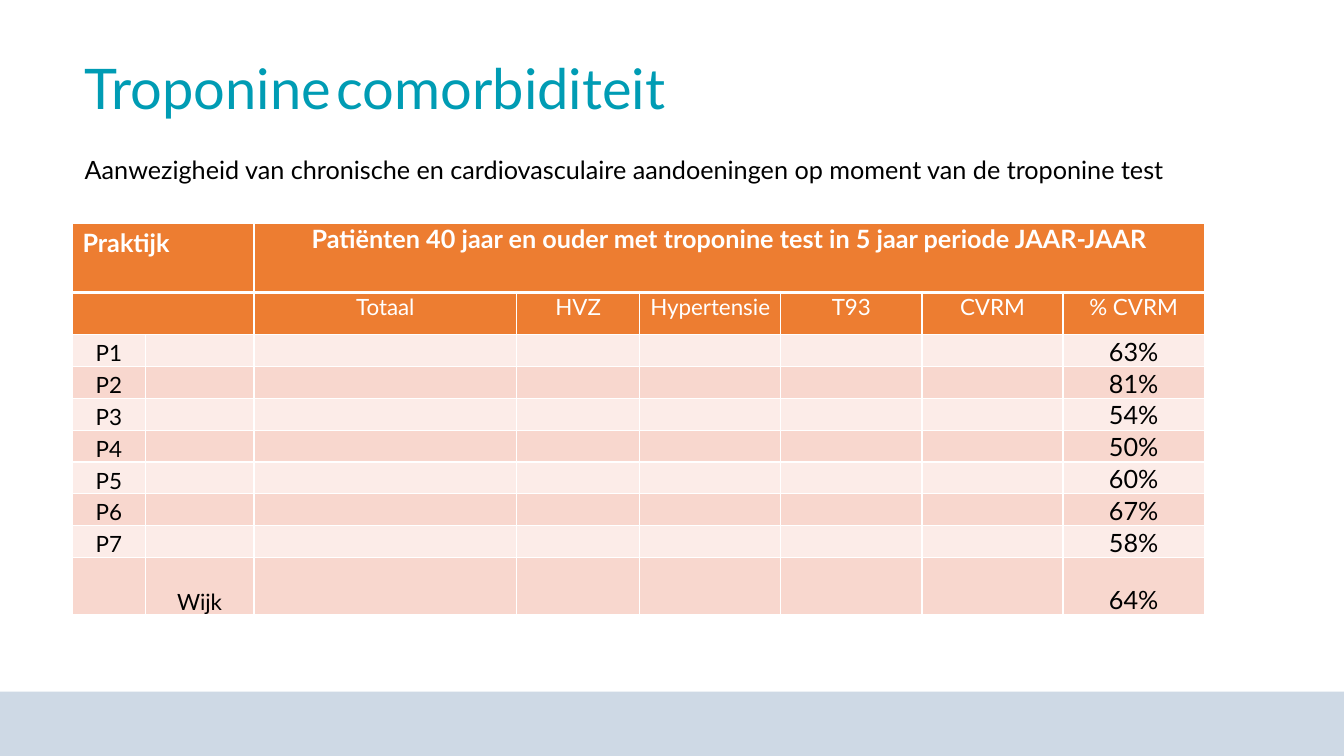
from lxml.etree import SubElement as Sub
from pptx import Presentation
from pptx.dml.color import RGBColor as Rgb
from pptx.enum.shapes import MSO_SHAPE as Geo
from pptx.enum.text import MSO_ANCHOR as Anc, MSO_AUTO_SIZE as Auto, PP_ALIGN as Al
from pptx.oxml.ns import qn
from pptx.util import Inches, Pt

TEAL, ORANGE, BAND = "009CB4", "ED7D31", "CED9E5"
PALE, PINK, WHITE, BLACK = "FCECE8", "F8D7CE", "FFFFFF", "000000"
COLS = [5.4, 8.1, 19.55, 9.15] + [10.5] * 4
ROWS = [9.2, 5.6] + [4.15] * 7 + [7.6]
HEADS = ["Totaal", "HVZ", "Hypertensie", "T93", "CVRM", "% CVRM"]
RATES = [63, 81, 54, 50, 60, 67, 58]
SMALL = {"size": Pt(16), "bold": False}
LARGE = {"size": Pt(18), "bold": False}
HEAD = {"size": Pt(18), "bold": True}
TIGHT = {"margin_left": Inches(0.01), "margin_right": Inches(0.01),
         "margin_top": Inches(0.01), "margin_bottom": 0}


def tint(code):
    """Turn a hex string into a colour."""
    return Rgb.from_string(code)


def put(obj, vals):
    """Set each attribute in a dict of format values."""
    for key, val in vals.items():
        setattr(obj, key, val)


class Deck:
    """Hold the style and the current slide; lengths are percents of its size."""

    font = "Lato"

    def __init__(self):
        """Open a wide deck with one titled slide."""
        self.prs = Presentation()
        put(self.prs, {"slide_width": Inches(13.33), "slide_height": Inches(7.5)})
        self.page = self.prs.slides.add_slide(self.prs.slide_layouts[1])

    def wide(self, part):
        """Give a percent of the slide width."""
        return round(self.prs.slide_width * part / 100)

    def high(self, part):
        """Give a percent of the slide height."""
        return round(self.prs.slide_height * part / 100)

    def area(self, x, y, w, h):
        """Give left, top, width and height."""
        return self.wide(x), self.high(y), self.wide(w), self.high(h)

    def say(self, para, text, code, look, align):
        """Add one styled run to a paragraph."""
        para.alignment = align
        run = para.add_run()
        run.text = text
        put(run.font, {"name": self.font, **look})
        run.font.color.rgb = tint(code)

    def hold(self, idx, box, text, code, look, tab=0):
        """Move and fill a placeholder, with an optional tab stop."""
        item = self.page.placeholders[idx]
        put(item, dict(zip(("left", "top", "width", "height"), self.area(*box))))
        frame = item.text_frame
        put(frame, {"word_wrap": True, "auto_size": Auto.NONE,
                    "vertical_anchor": Anc.TOP})
        para = frame.paragraphs[0]
        props = para._p.get_or_add_pPr()
        for key in ("marL", "indent"):
            props.set(key, "0")
        Sub(props, qn("a:buNone"))
        if tab:
            stops = Sub(props, qn("a:tabLst"))
            Sub(stops, qn("a:tab"), pos=str(self.wide(tab)), algn="l")
        para.space_before = 0
        self.say(para, text, code, look, Al.LEFT)

    def bar(self, box, code):
        """Draw a plain rectangle."""
        item = self.page.shapes.add_shape(Geo.RECTANGLE, *self.area(*box))
        item.shadow.inherit = False
        item.fill.solid()
        item.fill.fore_color.rgb = tint(code)
        item.line.fill.background()

    def grid(self, x, y, cols, rows):
        """Add a table with set columns and rows."""
        box = self.area(x, y, sum(cols), sum(rows))
        table = self.page.shapes.add_table(len(rows), len(cols), *box).table
        put(table, {"first_row": False, "horz_banding": False})
        for col, part in zip(table.columns, cols):
            col.width = self.wide(part)
        for row, part in zip(table.rows, rows):
            row.height = self.high(part)
        return table

    def paint(self, cell, code, below=1, above=1):
        """Give a cell its white edges, insets and fill."""
        props = cell._tc.get_or_add_tcPr()
        for side, size in zip("LRTB", (1, 1, above, below)):
            edge = Sub(props, qn("a:ln" + side), w=str(int(Pt(size))))
            ink = Sub(edge, qn("a:solidFill"))
            Sub(ink, qn("a:srgbClr"), val=WHITE)
        put(cell, TIGHT)
        cell.fill.solid()
        cell.fill.fore_color.rgb = tint(code)

    def label(self, cell, text, code, look, align=Al.CENTER, anchor=Anc.BOTTOM):
        """Put text in a cell."""
        cell.vertical_anchor = anchor
        self.say(cell.text_frame.paragraphs[0], text, code, look, align)


def main():
    """Build and save the slide."""
    deck = Deck()
    deck.bar((0, 91.47, 100, 8.53), BAND)
    deck.hold(0, (5.55, 6.4, 84.1, 10.3), "Troponine\tcomorbiditeit", TEAL,
              {"size": Pt(40)}, tab=52.5)
    deck.hold(1, (5.55, 19.75, 84.1, 5.5),
              "Aanwezigheid van chronische en cardiovasculaire aandoeningen "
              "op moment van de troponine test", BLACK, LARGE)

    table = deck.grid(5.4, 29.5, COLS, ROWS)
    for row in range(len(ROWS)):
        fill = ORANGE if row < 2 else (PALE, PINK)[row % 2]
        for col in range(len(COLS)):
            deck.paint(table.cell(row, col), fill, below=3 if row == 0 else 1,
                       above=3 if row == 1 else 1)
    for row, start, end in ((0, 0, 1), (0, 2, 7), (1, 0, 1)):
        table.cell(row, start).merge(table.cell(row, end))

    first = table.cell(0, 0)
    put(first, {"margin_left": Inches(0.1), "margin_top": Inches(0.05)})
    deck.label(first, "Praktijk", WHITE, HEAD, Al.LEFT, Anc.TOP)
    deck.label(table.cell(0, 2), "Patiënten 40 jaar en ouder met troponine test "
               "in 5 jaar periode JAAR-JAAR", WHITE, HEAD, anchor=Anc.TOP)
    for col, head in enumerate(HEADS, 2):
        deck.label(table.cell(1, col), head, WHITE, SMALL, anchor=Anc.TOP)
    for num, rate in enumerate(RATES, 1):
        deck.label(table.cell(num + 1, 0), f"P{num}", BLACK, SMALL)
        deck.label(table.cell(num + 1, 7), f"{rate}%", BLACK, LARGE)
    deck.label(table.cell(9, 1), "Wijk", BLACK, SMALL)
    deck.label(table.cell(9, 7), "64%", BLACK, LARGE)
    deck.prs.save("out.pptx")


if __name__ == "__main__":
    main()
